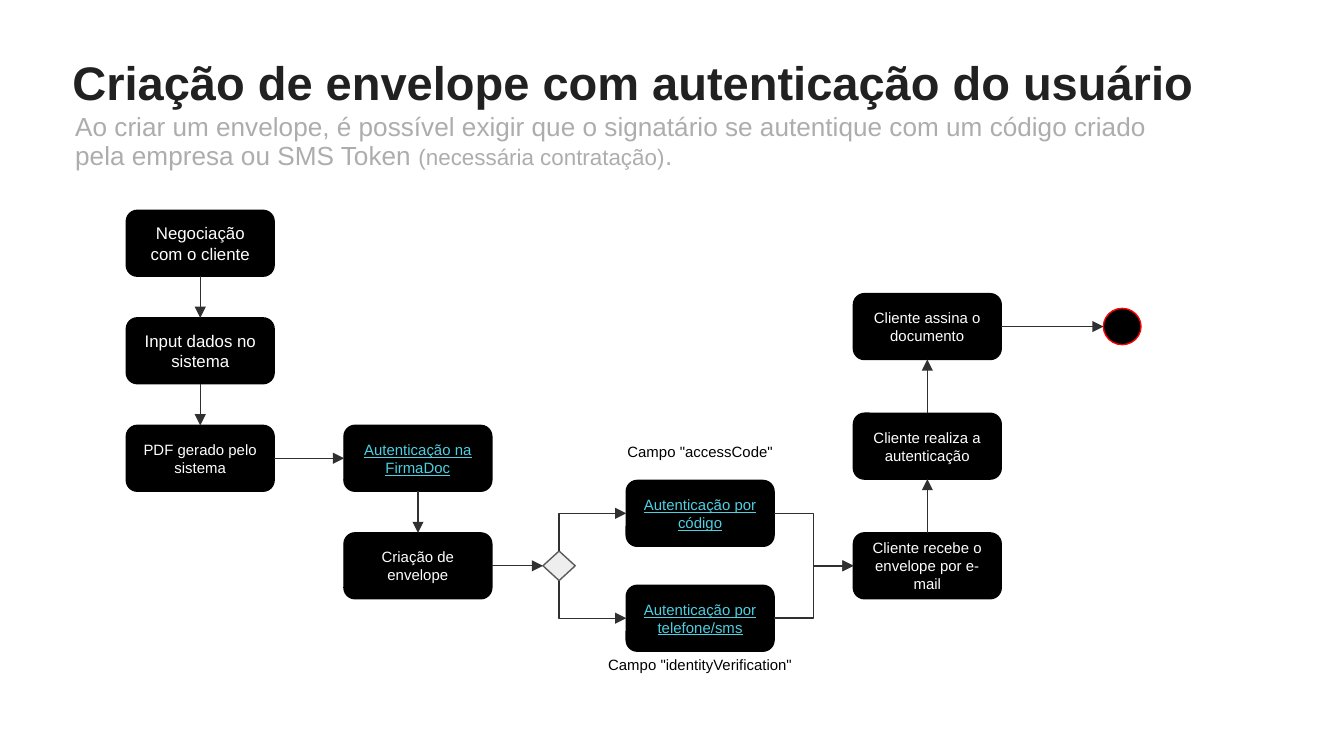
from lxml import etree
from pptx import Presentation
from pptx import util as u
from pptx.dml.color import RGBColor
from pptx.enum import shapes, text
from pptx.oxml.ns import qn

COLORS = {"title": "212121", "muted": "ADADAD", "black": "000000", "white": "FFFFFF",
          "link": "4DD0E1", "arrow": "303030", "gate": "EEEEEE", "gate_line": "595959",
          "end_line": "FF0000"}
TOP, LEFT, BOTTOM, RIGHT = range(4)

# Grid in inches: box centres by column, rows counted upwards from the base row
COL = {"prepare": 1.49, "create": 3.11, "gate": 4.16, "verify": 5.21, "client": 6.9, "end": 8.35}
BASE = 4.21
ROW, CLIENT_ROW, BRANCH = 0.8, 0.89, 0.39
BOX_W, BOX_H = 1.1, 0.49

prs = Presentation()
prs.slide_width = u.Inches(10)
prs.slide_height = prs.slide_width * 9 // 16
s = prs.slides.add_slide(prs.slide_layouts[6])


def write(tf, runs, align, anchor, inset=0.1):
    """Fill a text frame with one paragraph of (text, font values, colour) runs."""
    tf.word_wrap = True
    tf.vertical_anchor = anchor
    for side in ("left", "top", "right", "bottom"):
        setattr(tf, f"margin_{side}", u.Inches(inset))
    p = tf.paragraphs[0]
    p.alignment = align
    for words, values, color in runs:
        r = p.add_run()
        r.text = words
        r.font.color.rgb = RGBColor.from_string(COLORS[color])
        for key, value in {"name": "Arial", **values}.items():
            setattr(r.font, key, value)
    return p


def arrow(kind, begin, end):
    c = s.shapes.add_connector(kind, *(u.Inches(v) for v in (*begin, *end)))
    c.line.color.rgb = RGBColor.from_string(COLORS["arrow"])
    c.line.width = u.Pt(0.75)
    etree.SubElement(c._element.spPr.find(qn("a:ln")), qn("a:tailEnd"), type="triangle")
    etree.SubElement(c._element.spPr, qn("a:effectLst"))
    return c


# Heading and field captions: left, top, width, height, runs, align, anchor, inset
PP, MA = text.PP_ALIGN, text.MSO_ANCHOR
big, small, tiny = ({"size": u.Pt(n)} for n in (14, 12, 8))
texts = [
    (0.44, 0.29, 9.32, 0.63,
     [("Criação de envelope com autenticação do usuário", {"size": u.Pt(25.2), "bold": True}, "title")],
     PP.LEFT, MA.BOTTOM, 0.1),
    (0.56, 0.85, 8.3, 0.49,
     [("Ao criar um envelope, é possível exigir que o signatário se autentique com um código criado "
       "pela empresa ou SMS Token ", big, "muted"),
      ("(necessária contratação)", small, "muted"), (".", big, "muted")],
     PP.LEFT, MA.TOP, 0),
    (COL["verify"] - 0.72, 3.23, 1.44, 0.34, [('Campo "accessCode"', tiny, "black")],
     PP.CENTER, MA.TOP, 0.1),
    (COL["verify"] - 0.87, 4.81, 1.74, 0.34, [('Campo "identityVerification"', tiny, "black")],
     PP.CENTER, MA.TOP, 0.1),
]
for *place, runs, align, anchor, inset in texts:
    box = s.shapes.add_textbox(*(u.Inches(v) for v in place))
    p = write(box.text_frame, runs, align, anchor, inset)
    if inset == 0:
        p.line_spacing = 0.9

# Nodes: name, preset, column, centre y, width, height, fill, line, text, size, colour
BOX = shapes.MSO_SHAPE.ROUNDED_RECTANGLE
steps = [
    ("deal", "prepare", BASE - 3 * ROW, "Negociação com o cliente", 9, "white"),
    ("input", "prepare", BASE - 2 * ROW, "Input dados no sistema", 9, "white"),
    ("pdf", "prepare", BASE - ROW, "PDF gerado pelo sistema", 8, "white"),
    ("login", "create", BASE - ROW, "Autenticação na FirmaDoc", 8, "link"),
    ("envelope", "create", BASE, "Criação de envelope", 8, "white"),
    ("code", "verify", BASE - BRANCH, "Autenticação por código", 8, "link"),
    ("phone", "verify", BASE + BRANCH, "Autenticação por telefone/sms", 8, "link"),
    ("receive", "client", BASE, "Cliente recebe o envelope por e-mail", 8, "white"),
    ("verify", "client", BASE - CLIENT_ROW, "Cliente realiza a autenticação", 8, "white"),
    ("sign", "client", BASE - 2 * CLIENT_ROW, "Cliente assina o documento", 8, "white"),
]
nodes = [(name, BOX, col, y, BOX_W, BOX_H, "black", "black", label, size, color)
         for name, col, y, label, size, color in steps]
nodes += [
    ("gate", shapes.MSO_SHAPE.FLOWCHART_DECISION, "gate", BASE, 0.24, 0.22,
     "gate", "gate_line", "", 8, "white"),
    ("end", shapes.MSO_SHAPE.OVAL, "end", BASE - 2 * CLIENT_ROW, 0.28, 0.27,
     "black", "end_line", "", 8, "white"),
]
node = {}
for name, preset, col, y, w, h, fill, line, label, size, color in nodes:
    sp = s.shapes.add_shape(preset, *(u.Inches(v) for v in (COL[col] - w / 2, y - h / 2, w, h)))
    sp.shadow.inherit = False
    sp.fill.solid()
    sp.fill.fore_color.rgb = RGBColor.from_string(COLORS[fill])
    sp.line.color.rgb = RGBColor.from_string(COLORS[line])
    sp.line.width = u.Pt(0.75)
    if label:
        font = {"size": u.Pt(size), "underline": color == "link"}
        write(sp.text_frame, [(label, font, color)], PP.CENTER, MA.MIDDLE)
    node[name] = sp

# Straight arrows
for source, out, target, into in [
    ("deal", BOTTOM, "input", TOP), ("input", BOTTOM, "pdf", TOP),
    ("pdf", RIGHT, "login", LEFT), ("login", BOTTOM, "envelope", TOP),
    ("envelope", RIGHT, "gate", LEFT), ("receive", TOP, "verify", BOTTOM),
    ("verify", TOP, "sign", BOTTOM),
]:
    c = arrow(shapes.MSO_CONNECTOR.STRAIGHT, (0, 0), (0, 0))
    c.begin_connect(node[source], out)
    c.end_connect(node[target], into)

end_y = BASE - 2 * CLIENT_ROW
c = arrow(shapes.MSO_CONNECTOR.STRAIGHT, (COL["client"] + BOX_W / 2, end_y), (COL["end"] - 0.14, end_y))
c.begin_connect(node["sign"], RIGHT)

# Bent arrows: the gate splits into two branches, which meet again at the client
for side in (-1, 1):
    branch_y = BASE + side * BRANCH
    split = arrow(shapes.MSO_CONNECTOR.ELBOW, (COL["gate"], BASE + side * 0.11),
                  (COL["verify"] - BOX_W / 2, branch_y))
    guides = split._element.spPr.find(qn("a:prstGeom")).get_or_add_avLst()
    etree.SubElement(guides, qn("a:gd"), name="adj1", fmla="val 0")
    arrow(shapes.MSO_CONNECTOR.ELBOW, (COL["verify"] + BOX_W / 2, branch_y),
          (COL["client"] - BOX_W / 2, BASE))

prs.save("out.pptx")
